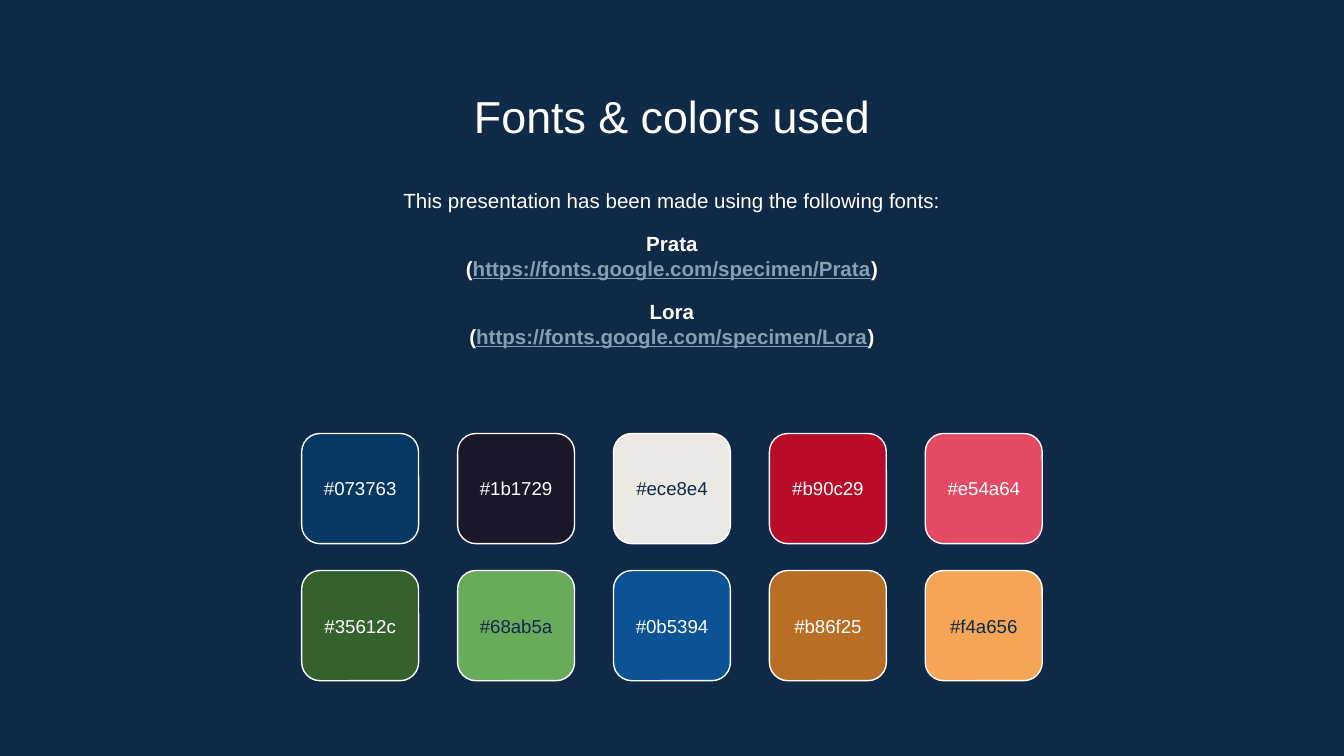
from dataclasses import dataclass
from pptx import Presentation
from pptx.dml.color import RGBColor
from pptx.enum.shapes import MSO_SHAPE
from pptx.enum.text import MSO_ANCHOR, PP_ALIGN
from pptx.util import Inches, Pt

ROUND = MSO_SHAPE.ROUNDED_RECTANGLE
TOP, MIDDLE = MSO_ANCHOR.TOP, MSO_ANCHOR.MIDDLE
CENTER = PP_ALIGN.CENTER

WIDE = 10
HIGH = WIDE * 9 / 16
STEP, DROP = 1.16, 1.02
TILE_W, TILE_H, LABEL_H = 0.87, 0.82, 0.48
MARGIN, EDGE = 0.78, 0.56
COLORS = {"navy": "0E2A47", "white": "FFFFFF", "link": "869FB2"}
SITE = "https://fonts.google.com/specimen/"
FONTS = ["Prata", "Lora"]


@dataclass
class Box:
    x: float
    y: float
    w: float
    h: float

    def place(self) -> list[int]:
        return [Inches(v) for v in (self.x, self.y, self.w, self.h)]


@dataclass
class Swatch:
    code: str
    ink: str = "white"


@dataclass
class Run:
    text: str
    color: str = "white"
    bold: bool = False
    underline: bool = False


@dataclass
class Line:
    runs: list[Run]
    before: float = 0


GRID = [
    [Swatch("#073763"), Swatch("#1b1729"), Swatch("#ece8e4", "navy"),
     Swatch("#b90c29"), Swatch("#e54a64")],
    [Swatch("#35612c"), Swatch("#68ab5a", "navy"), Swatch("#0b5394"),
     Swatch("#b86f25"), Swatch("#f4a656", "navy")],
]


def shade(name: str) -> RGBColor:
    return RGBColor.from_string(COLORS[name])


def write(slide, box: Box, lines: list[Line], size: float, anchor=TOP) -> None:
    frame = slide.shapes.add_textbox(*box.place()).text_frame
    inset = Inches(0.1)
    form = {"word_wrap": True, "vertical_anchor": anchor,
            "margin_left": inset, "margin_right": inset,
            "margin_top": inset, "margin_bottom": inset}
    for key, value in form.items():
        setattr(frame, key, value)
    for i, line in enumerate(lines):
        para = frame.add_paragraph() if i else frame.paragraphs[0]
        para.alignment = CENTER
        para.space_before = Pt(line.before)
        for part in line.runs:
            run = para.add_run()
            run.text = part.text
            style = {"name": "Arial", "size": Pt(size),
                     "bold": part.bold, "underline": part.underline}
            for key, value in style.items():
                setattr(run.font, key, value)
            run.font.color.rgb = shade(part.color)


def tile(slide, box: Box, swatch: Swatch) -> None:
    shape = slide.shapes.add_shape(ROUND, *box.place())
    shape.shadow.inherit = False
    shape.fill.solid()
    shape.fill.fore_color.rgb = RGBColor.from_string(swatch.code[1:].upper())
    shape.line.color.rgb = shade("white")
    shape.line.width = Pt(0.75)
    label = Box(box.x, box.y + (box.h - LABEL_H) / 2, box.w, LABEL_H)
    write(slide, label, [Line([Run(swatch.code, swatch.ink)])], 10, MIDDLE)


def entry(name: str) -> list[Line]:
    link = Run(SITE + name, "link", True, True)
    return [Line([Run(name, bold=True)], 10),
            Line([Run("(", bold=True), link, Run(")", bold=True)])]


def main() -> None:
    deck = Presentation()
    deck.slide_width, deck.slide_height = Inches(WIDE), Inches(HIGH)
    slide = deck.slides.add_slide(deck.slide_layouts[6])
    slide.background.fill.solid()
    slide.background.fill.fore_color.rgb = shade("navy")

    span = WIDE - 2 * MARGIN
    title = Box(MARGIN, EDGE, span, 0.53)
    write(slide, title, [Line([Run("Fonts & colors used")])], 24)
    intro = "This presentation has been made using the following fonts:"
    lines = [Line([Run(intro)])]
    for name in FONTS:
        lines += entry(name)
    write(slide, Box(MARGIN, 1.3, span, 1.56), lines, 11)

    left = (WIDE - (len(GRID[0]) - 1) * STEP - TILE_W) / 2
    top = HIGH - EDGE - (len(GRID) - 1) * DROP - TILE_H
    for r, row in enumerate(GRID):
        for c, swatch in enumerate(row):
            box = Box(left + c * STEP, top + r * DROP, TILE_W, TILE_H)
            tile(slide, box, swatch)
    deck.save("out.pptx")


if __name__ == "__main__":
    main()
